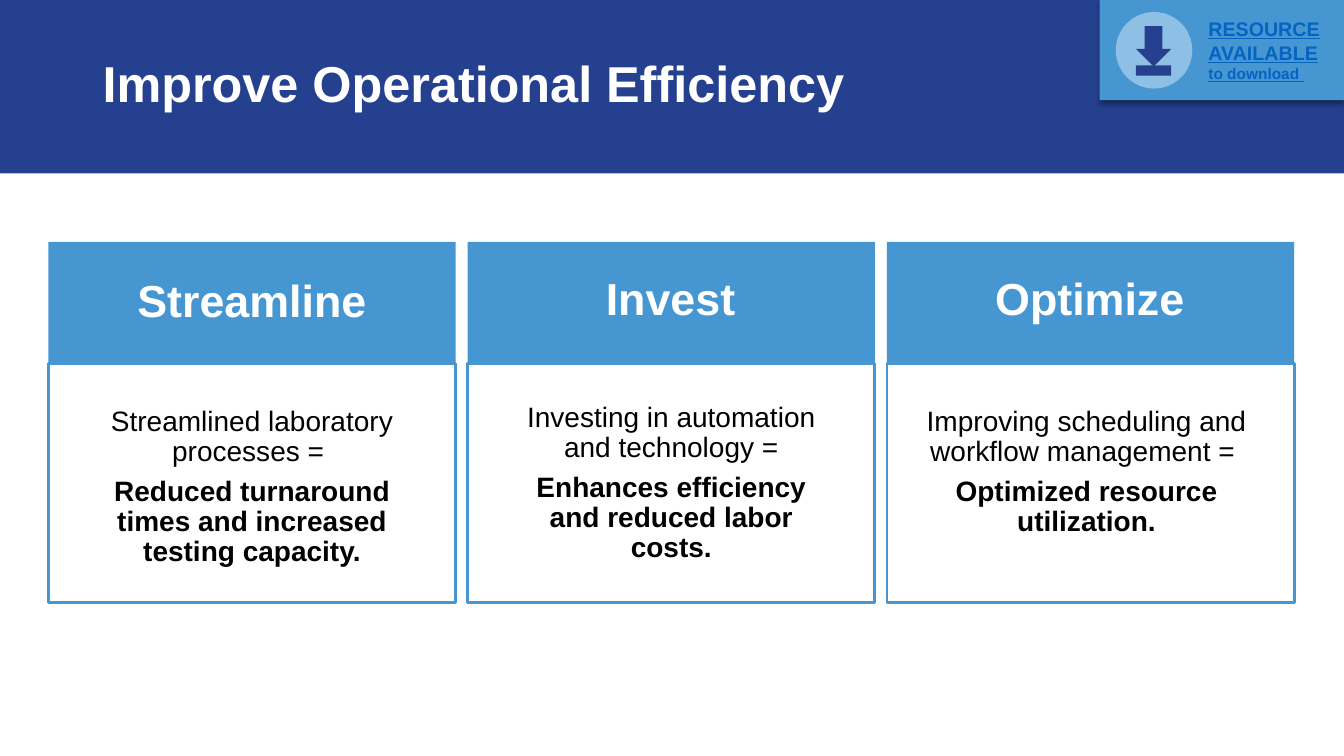
from dataclasses import dataclass
from typing import NamedTuple

from lxml import etree
from pptx import Presentation
from pptx.dml.color import RGBColor
from pptx.enum.shapes import MSO_SHAPE
from pptx.enum.text import MSO_ANCHOR, PP_ALIGN
from pptx.oxml.ns import qn
from pptx.util import Pt

RECTANGLE = MSO_SHAPE.RECTANGLE
OVAL = MSO_SHAPE.OVAL
DOWN_ARROW = MSO_SHAPE.DOWN_ARROW
LEFT = PP_ALIGN.LEFT
CENTER = PP_ALIGN.CENTER
TOP = MSO_ANCHOR.TOP
MIDDLE = MSO_ANCHOR.MIDDLE

FONT = "Arial"
NAVY = "25408F"
SKY = "4696D2"
PALE_SKY = "8EBFE4"
ICON_NAVY = "26408F"
LINK_BLUE = "0563C1"
WHITE = "FFFFFF"
BLACK = "000000"

COLUMN_LEFT = 34.6
COLUMN_WIDTH = 290.9
COLUMN_PITCH = 299.5
HEADER_TOP = 172.8
HEADER_HEIGHT = 87.1
BODY_TOP = HEADER_TOP + HEADER_HEIGHT
BODY_HEIGHT = 170.6


class Box(NamedTuple):
    left: float
    top: float
    width: float
    height: float

    def shifted(self, across: float, down: float) -> "Box":
        return self._replace(left=self.left + across, top=self.top + down)

    def lengths(self) -> list:
        return [Pt(value) for value in self]


class TextRun(NamedTuple):
    text: str
    size: float
    bold: bool = True
    break_after: bool = False


@dataclass(frozen=True)
class Column:
    heading: str
    action: str
    outcome: str
    heading_shift: tuple[float, float]
    body_shift: tuple[float, float]


@dataclass(frozen=True)
class IconPart:
    kind: MSO_SHAPE
    box: Box
    color: str


COLUMNS = [
    Column("Streamline", "Streamlined laboratory processes = ",
           "Reduced turnaround times and increased testing capacity.", (0, 0), (0, 2)),
    Column("Invest", "Investing in automation and technology =",
           "Enhances efficiency and reduced labor costs.", (-0.5, -1.4), (0, -0.9)),
    Column("Optimize", "Improving scheduling and workflow management = ",
           "Optimized resource utilization.", (-0.5, -1.4), (-2.9, 2)),
]

DOWNLOAD_ICON = [
    IconPart(OVAL, Box(797, 8.6, 54.7, 54.7), PALE_SKY),
    IconPart(DOWN_ARROW, Box(811.4, 18.7, 25.2, 28.8), ICON_NAVY),
    IconPart(RECTANGLE, Box(811.4, 46.8, 25.2, 7.2), ICON_NAVY),
]


def color_of(value: str) -> RGBColor:
    return RGBColor.from_string(value)


def add_block(slide, kind: MSO_SHAPE, box: Box, fill: str, line: str | None = None):
    shape = slide.shapes.add_shape(kind, *box.lengths())
    shape.shadow.inherit = False
    shape.fill.solid()
    shape.fill.fore_color.rgb = color_of(fill)
    if line:
        shape.line.color.rgb = color_of(line)
        shape.line.width = Pt(2)
    else:
        shape.line.fill.background()
    return shape


def add_drop_shadow(shape) -> None:
    effects = shape._element.spPr.find(qn("a:effectLst"))
    shadow = etree.SubElement(
        effects, qn("a:outerShdw"), blurRad=str(Pt(4)), dist=str(Pt(3)),
        dir="5400000", algn="t", rotWithShape="0")
    color = etree.SubElement(shadow, qn("a:srgbClr"), val=BLACK)
    etree.SubElement(color, qn("a:alpha"), val="40000")


def add_text(slide, box: Box, paragraphs: list[list[TextRun]], *, color: str,
             align: PP_ALIGN = LEFT, anchor: MSO_ANCHOR = TOP,
             inset: tuple[float, float] = (7.2, 3.6), line_spacing: float = 0.9,
             underline: bool = False) -> None:
    frame = slide.shapes.add_textbox(*box.lengths()).text_frame
    frame.word_wrap = True
    frame.vertical_anchor = anchor
    frame.margin_left = frame.margin_right = Pt(inset[0])
    frame.margin_top = frame.margin_bottom = Pt(inset[1])
    for index, text_runs in enumerate(paragraphs):
        paragraph = frame.add_paragraph() if index else frame.paragraphs[0]
        paragraph.alignment = align
        paragraph.line_spacing = line_spacing
        paragraph.space_before = Pt(7 if index else 0)
        for text_run in text_runs:
            run = paragraph.add_run()
            run.text = text_run.text
            run.font.name = FONT
            run.font.size = Pt(text_run.size)
            run.font.bold = text_run.bold
            run.font.underline = underline
            run.font.color.rgb = color_of(color)
            if text_run.break_after:
                paragraph.add_line_break()


def add_banner(slide) -> None:
    add_block(slide, RECTANGLE, Box(0, 0, 960, 123.8), NAVY)
    add_text(slide, Box(66.2, 15.8, 814.3, 92.2),
             [[TextRun("Improve Operational Efficiency", 36)]],
             color=WHITE, anchor=MIDDLE)


def add_download_badge(slide) -> None:
    badge = add_block(slide, RECTANGLE, Box(785.5, -0.5, 174.8, 72), SKY)
    add_drop_shadow(badge)
    add_text(slide, Box(856.1, 8.6, 97.2, 54.7),
             [[TextRun("RESOURCE AVAILABLE", 14, break_after=True),
               TextRun("to download ", 11)]],
             color=LINK_BLUE, line_spacing=1.0, underline=True)
    for part in DOWNLOAD_ICON:
        add_block(slide, part.kind, part.box, part.color)


def add_column(slide, column: Column, left: float) -> None:
    header = Box(left, HEADER_TOP, COLUMN_WIDTH, HEADER_HEIGHT)
    body = Box(left, BODY_TOP, COLUMN_WIDTH, BODY_HEIGHT)
    add_block(slide, RECTANGLE, header, SKY)
    add_text(slide, header.shifted(*column.heading_shift),
             [[TextRun(column.heading, 32)]],
             color=WHITE, align=CENTER, anchor=MIDDLE, inset=(23, 23))
    add_block(slide, RECTANGLE, body, WHITE, line=SKY)
    add_text(slide, body.shifted(*column.body_shift),
             [[TextRun(column.action, 20, bold=False)], [TextRun(column.outcome, 20)]],
             color=BLACK, align=CENTER, inset=(28.8, 28.8))


def main() -> None:
    presentation = Presentation()
    presentation.slide_width = Pt(960)
    presentation.slide_height = Pt(540)
    slide = presentation.slides.add_slide(presentation.slide_layouts[6])
    add_banner(slide)
    add_download_badge(slide)
    for index, column in enumerate(COLUMNS):
        add_column(slide, column, COLUMN_LEFT + index * COLUMN_PITCH)
    presentation.save("out.pptx")


if __name__ == "__main__":
    main()
